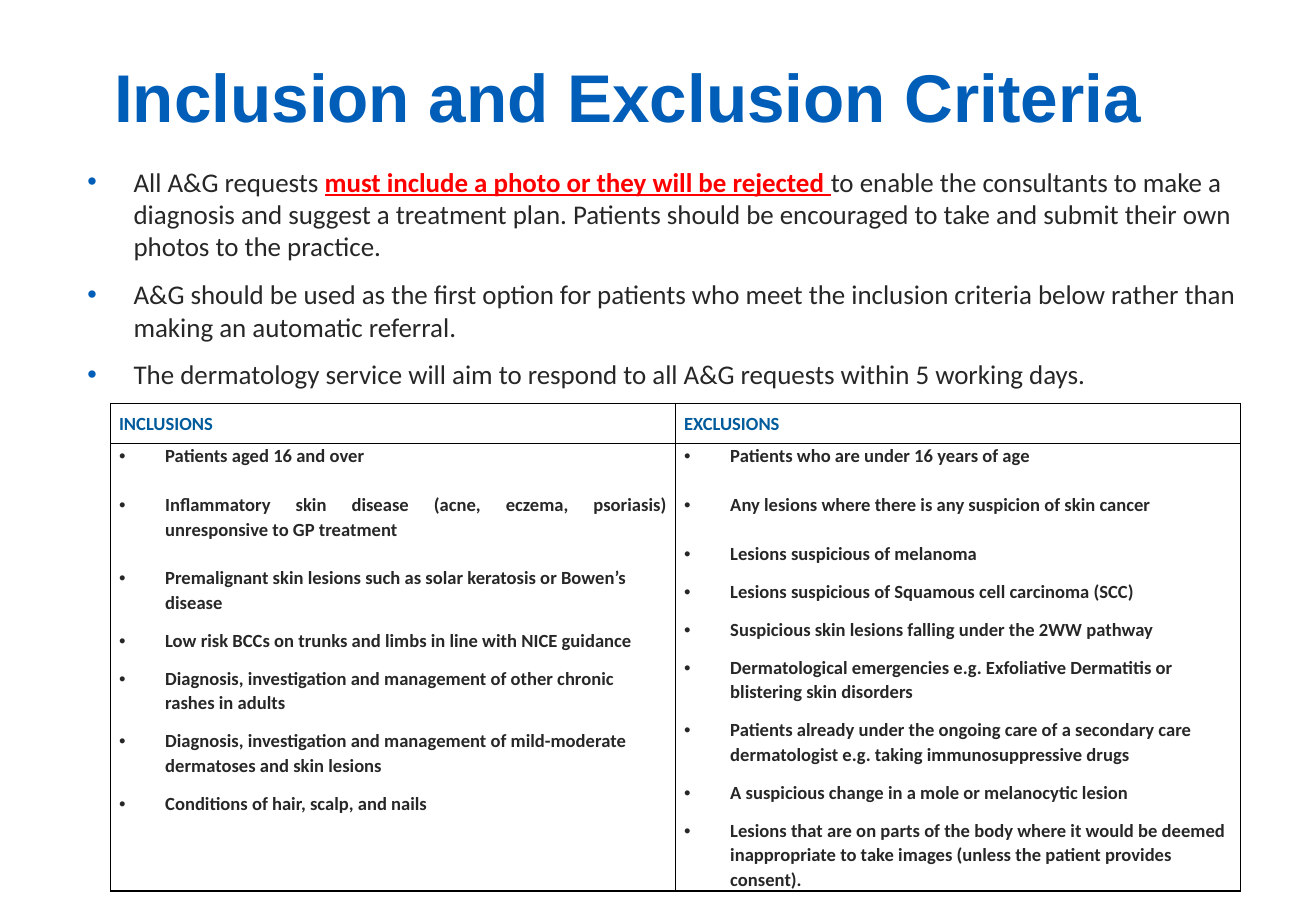
from dataclasses import dataclass

from lxml import etree
from pptx import Presentation
from pptx.dml.color import RGBColor
from pptx.enum.text import MSO_ANCHOR as Anchor, MSO_AUTO_SIZE as AutoSize, PP_ALIGN as Align
from pptx.oxml.ns import qn
from pptx.util import Inches, Pt

BLUE, HEADER_BLUE, INK, RED, BLACK = "005EB8", "005B9C", "272727", "FF0000", "000000"
HANG = Inches(0.38)
BLANK_LINE = 14.4  # points, one line of table text


@dataclass
class Span:
    text: str
    size: float
    color: str = INK
    bold: bool = False
    underline: bool = False
    font: str = "Calibri"


@dataclass
class Criterion:
    text: str
    after: float = 8
    justified: bool = False


INTRO = [
    [
        Span("All A&G requests ", 16),
        Span("must include a photo or they will be rejected ", 16, RED, True, True),
        Span("to enable the consultants to make a diagnosis and suggest a treatment plan. "
             "Patients should be encouraged to take and submit their own photos to the practice.", 16),
    ],
    [Span("A&G should be used as the first option for patients who meet the inclusion criteria "
          "below rather than making an automatic referral.", 16)],
    [Span("The dermatology service will aim to respond to all A&G requests within 5 working days.", 16)],
]

CRITERIA = {
    "INCLUSIONS": [
        Criterion("Patients aged 16 and over", BLANK_LINE, True),
        Criterion("Inflammatory skin disease (acne, eczema, psoriasis) unresponsive to GP treatment",
                  BLANK_LINE, True),
        Criterion("Premalignant skin lesions such as solar keratosis or Bowen’s disease"),
        Criterion("Low risk BCCs on trunks and limbs in line with NICE guidance"),
        Criterion("Diagnosis, investigation and management of other chronic rashes in adults"),
        Criterion("Diagnosis, investigation and management of mild-moderate dermatoses and skin lesions"),
        Criterion("Conditions of hair, scalp, and nails"),
    ],
    "EXCLUSIONS": [
        Criterion("Patients who are under 16 years of age", BLANK_LINE, True),
        Criterion("Any lesions where there is any suspicion of skin cancer", BLANK_LINE, True),
        Criterion("Lesions suspicious of melanoma"),
        Criterion("Lesions suspicious of Squamous cell carcinoma (SCC)"),
        Criterion("Suspicious skin lesions falling under the 2WW pathway"),
        Criterion("Dermatological emergencies e.g. Exfoliative Dermatitis or blistering skin disorders"),
        Criterion("Patients already under the ongoing care of a secondary care dermatologist "
                  "e.g. taking immunosuppressive drugs"),
        Criterion("A suspicious change in a mole or melanocytic lesion"),
        Criterion("Lesions that are on parts of the body where it would be deemed inappropriate "
                  "to take images (unless the patient provides consent)."),
    ],
}


def rgb(color: str) -> RGBColor:
    return RGBColor.from_string(color)


def apply(target, values: dict) -> None:
    for name, value in values.items():
        setattr(target, name, value)


def add_span(para, span: Span) -> None:
    run = para.add_run()
    run.text = span.text
    apply(run.font, {"name": span.font, "size": Pt(span.size), "bold": span.bold,
                     "underline": span.underline})
    run.font.color.rgb = rgb(span.color)


def add_bullet(para, color: str) -> None:
    props = para._p.get_or_add_pPr()
    props.set("marL", str(HANG))
    props.set("indent", str(-HANG))
    fill = etree.SubElement(props, qn("a:buClr"))
    etree.SubElement(fill, qn("a:srgbClr"), val=color)
    etree.SubElement(props, qn("a:buFont"), typeface="Arial")
    etree.SubElement(props, qn("a:buChar"), char="•")


def add_paras(frame, count: int) -> list:
    return [frame.paragraphs[0]] + [frame.add_paragraph() for _ in range(count - 1)]


def format_frame(frame, anchor) -> None:
    apply(frame, {"margin_left": 0, "margin_right": 0, "margin_top": Inches(0.05),
                  "margin_bottom": Inches(0.05), "word_wrap": True,
                  "auto_size": AutoSize.NONE, "vertical_anchor": anchor})


def format_cell(cell, anchor) -> None:
    apply(cell, {"margin_left": Inches(0.07), "margin_right": Inches(0.07), "margin_top": 0,
                 "margin_bottom": 0, "vertical_anchor": anchor})
    props = cell._tc.get_or_add_tcPr()
    for side in ("lnL", "lnR", "lnT", "lnB"):
        line = etree.SubElement(props, qn(f"a:{side}"), w=str(Pt(1)))
        fill = etree.SubElement(line, qn("a:solidFill"))
        etree.SubElement(fill, qn("a:srgbClr"), val=BLACK)
    cell.fill.background()


def add_title(page) -> None:
    title = page.shapes.title
    apply(title, {"left": Inches(0.94), "top": Inches(0.16),
                  "width": Inches(9.27), "height": Inches(1.25)})
    format_frame(title.text_frame, Anchor.MIDDLE)
    para = title.text_frame.paragraphs[0]
    para.alignment = Align.LEFT
    add_span(para, Span("Inclusion and Exclusion Criteria", 40, BLUE, True, font="Arial"))


def add_intro(page) -> None:
    box = page.shapes.add_textbox(Inches(0.72), Inches(1.31), Inches(9.66), Inches(5.74))
    format_frame(box.text_frame, Anchor.TOP)
    for index, para in enumerate(add_paras(box.text_frame, len(INTRO))):
        add_bullet(para, BLUE)
        apply(para, {"space_before": Pt(3.2 if index else 0), "space_after": Pt(6)})
        for span in INTRO[index]:
            add_span(para, span)


def add_criteria(page) -> None:
    table = page.shapes.add_table(2, len(CRITERIA), Inches(0.91), Inches(3.32),
                                  Inches(9.3), Inches(3.94)).table
    apply(table, {"first_row": False, "horz_banding": False})
    for row, height in zip(table.rows, (0.33, 3.61)):
        row.height = Inches(height)
    for index, (heading, criteria) in enumerate(CRITERIA.items()):
        table.columns[index].width = Inches(4.65)
        head, body = table.cell(0, index), table.cell(1, index)
        format_cell(head, Anchor.MIDDLE)
        format_cell(body, Anchor.TOP)
        head_para = head.text_frame.paragraphs[0]
        head_para.line_spacing = 1.07
        add_span(head_para, Span(heading, 11, HEADER_BLUE, True))
        for para, item in zip(add_paras(body.text_frame, len(criteria)), criteria):
            add_bullet(para, INK)
            apply(para, {"alignment": Align.JUSTIFY if item.justified else Align.LEFT,
                         "line_spacing": 1.07, "space_after": Pt(item.after)})
            add_span(para, Span(item.text, 11, bold=True))


def main() -> None:
    deck = Presentation()
    apply(deck, {"slide_width": Inches(10.83), "slide_height": Inches(7.5)})
    page = deck.slides.add_slide(deck.slide_layouts[5])
    # Heading, introduction, then the two columns of criteria
    add_title(page)
    add_intro(page)
    add_criteria(page)
    deck.save("out.pptx")


if __name__ == "__main__":
    main()
